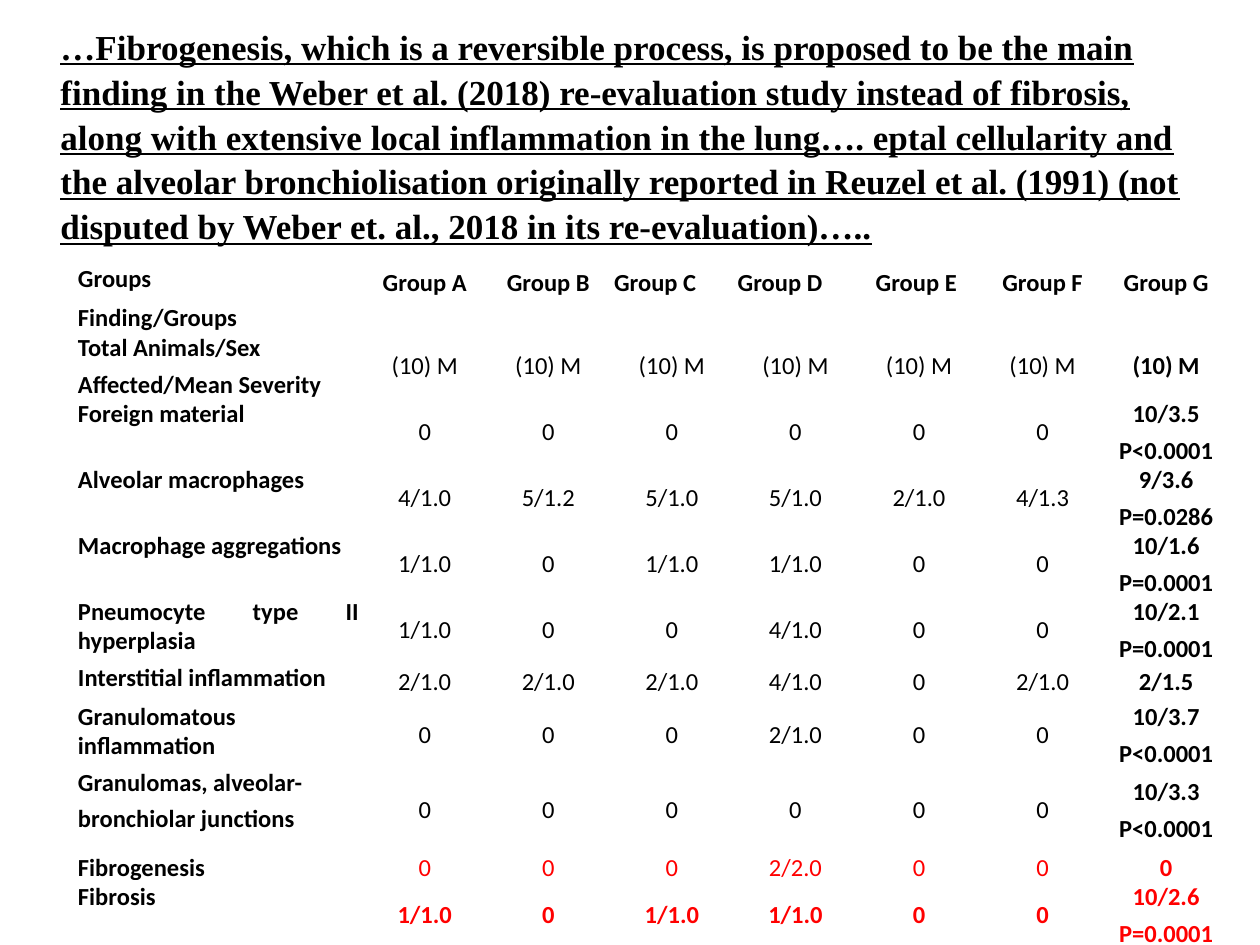
from dataclasses import dataclass
from lxml.etree import SubElement
from pptx import Presentation
from pptx.dml.color import RGBColor as RGB
from pptx.enum.text import MSO_ANCHOR, MSO_AUTO_SIZE, PP_ALIGN as Align
from pptx.oxml import parse_xml
from pptx.oxml.ns import nsdecls, qn
from pptx.util import Pt

# Content: each line in a cell is one paragraph
TITLE = (
    "…Fibrogenesis, which is a reversible process, is proposed to be the main "
    "finding in the Weber et al. (2018) re-evaluation study instead of fibrosis, "
    "along with extensive local inflammation in the lung…. eptal cellularity and "
    "the alveolar bronchiolisation originally reported in Reuzel et al. (1991) "
    "(not disputed by Weber et. al., 2018 in its re-evaluation)….."
)
GROUPS = ["Group A", "Group B", "Group C", "Group D", "Group E ", "Group F", "Group G"]
# (row height in px, finding, values for groups A to G)
ROWS = [
    (39, "Groups", GROUPS),
    (30, "Finding/Groups", [""] * 7),
    (66, "Total Animals/Sex\nAffected/Mean Severity", ["(10) M"] * 7),
    (66, "Foreign material", ["0"] * 6 + ["10/3.5\nP<0.0001"]),
    (66, "Alveolar macrophages",
     ["4/1.0", "5/1.2", "5/1.0", "5/1.0", "2/1.0", "4/1.3", "9/3.6\nP=0.0286"]),
    (66, "Macrophage aggregations",
     ["1/1.0", "0", "1/1.0", "1/1.0", "0", "0", "10/1.6\nP=0.0001"]),
    (66, "Pneumocyte type II hyperplasia",
     ["1/1.0", "0", "0", "4/1.0", "0", "0", "10/2.1\nP=0.0001"]),
    (39, "Interstitial inflammation ",
     ["2/1.0", "2/1.0", "2/1.0", "4/1.0", "0", "2/1.0", "2/1.5"]),
    (66, "Granulomatous inflammation",
     ["0", "0", "0", "2/1.0", "0", "0", "10/3.7\nP<0.0001"]),
    (85, "Granulomas, alveolar-\nbronchiolar junctions", ["0"] * 6 + ["10/3.3\nP<0.0001"]),
    (29, "Fibrogenesis", ["0", "0", "0", "2/2.0", "0", "0", "0"]),
    (66, "Fibrosis", ["1/1.0", "0", "1/1.0", "1/1.0", "0", "0", "10/2.6\nP=0.0001"]),
]
LEFT_HEADERS = ("Group C", "Group D")
RED_FINDINGS = ("Fibrogenesis", "Fibrosis")


@dataclass(frozen=True)
class Theme:
    text: RGB = RGB(0, 0, 0)
    alert: RGB = RGB(255, 0, 0)
    border: str = "FFFFFF"
    title_font: str = "Times New Roman"
    table_font: str = "Calibri"
    title_size: int = 20
    table_size: int = 14
    gap: int = 2


T = Theme()


def px(n):
    return round(n * 914400 / 126)


def add_run(p, text, font, size, color, bold=True):
    r = p.add_run()
    r.text = text
    r.font.name, r.font.size, r.font.bold = font, Pt(size), bold
    r.font.color.rgb = color
    return r


def set_borders(cell, top, bottom):
    tc_pr = cell._tc.get_or_add_tcPr()
    for i, (side, width) in enumerate((("L", 1), ("R", 1), ("T", top), ("B", bottom))):
        tc_pr.insert(i, parse_xml(
            f'<a:ln{side} {nsdecls("a")} w="{Pt(width)}"><a:solidFill>'
            f'<a:srgbClr val="{T.border}"/></a:solidFill></a:ln{side}>'))


def fill_cell(cell, text, align, color, bold):
    cell.fill.background()
    cell.margin_left = cell.margin_right = px(4)
    cell.margin_top = cell.margin_bottom = 0
    tf = cell.text_frame
    for i, line in enumerate(text.split("\n")):
        p = tf.add_paragraph() if i else tf.paragraphs[0]
        p.alignment = align
        p.space_before, p.space_after = Pt(T.gap if i else 0), Pt(T.gap)
        if line:
            add_run(p, line, T.table_font, T.table_size, color, bold)
        else:  # keeps the empty cell as low as a filled one
            SubElement(p._p, qn("a:endParaRPr"), sz=str(T.table_size * 100))


prs = Presentation()
prs.slide_width, prs.slide_height = px(1260), px(945)
s = prs.slides.add_slide(prs.slide_layouts[6])

# Title
box = s.shapes.add_textbox(px(48), px(16), px(1154), px(237))
tf = box.text_frame
tf.word_wrap = True
tf.auto_size = MSO_AUTO_SIZE.SHAPE_TO_FIT_TEXT
p = tf.paragraphs[0]
p.line_spacing = 1.07
add_run(p, TITLE, T.title_font, T.title_size, T.text).font.underline = True

# Findings table
width, first_col = 1154, 289
table = s.shapes.add_table(len(ROWS), len(GROUPS) + 1, px(74), px(264), px(width),
                           px(sum(row[0] for row in ROWS))).table
table.first_row = table.horz_banding = False
for c, column in enumerate(table.columns):
    column.width = px((width - first_col) / len(GROUPS) if c else first_col)

last_row, last_col = len(ROWS) - 1, len(GROUPS)
for i, (height, finding, values) in enumerate(ROWS):
    table.rows[i].height = px(height)
    for c, text in enumerate([finding] + values):
        cell = table.cell(i, c)
        align = (Align.JUSTIFY if c == 0 else
                 Align.LEFT if text in LEFT_HEADERS else Align.CENTER)
        color = T.alert if c and finding in RED_FINDINGS else T.text
        fill_cell(cell, text, align, color, i in (0, last_row) or c in (0, last_col))
        cell.vertical_anchor = MSO_ANCHOR.MIDDLE if c else MSO_ANCHOR.TOP
        set_borders(cell, 3 if i == last_row else 1, 3 if i == 0 else 1)

prs.save("out.pptx")
